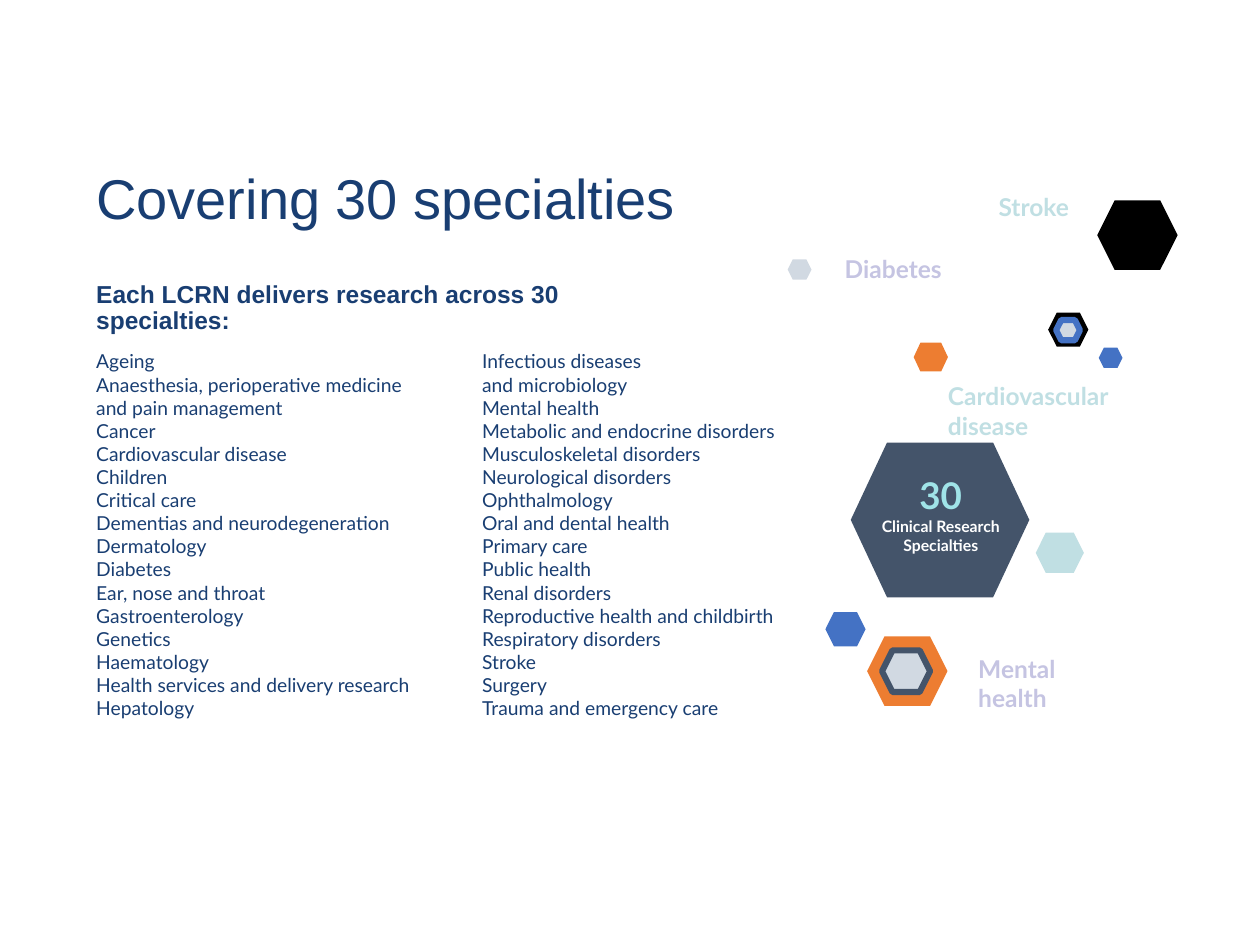
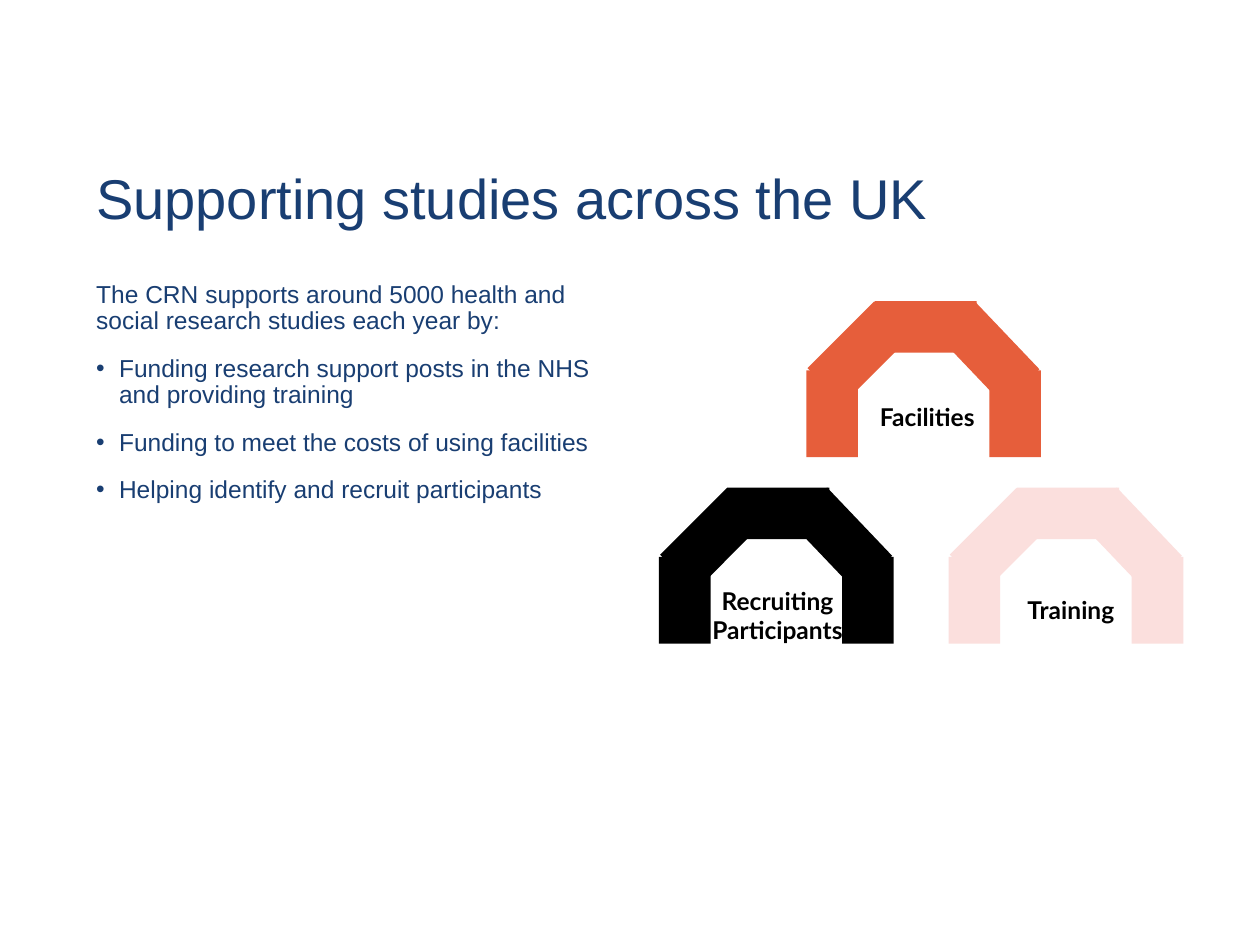
from dataclasses import dataclass

from lxml import etree
from pptx import Presentation
from pptx.dml.color import RGBColor
from pptx.enum.shapes import MSO_SHAPE
from pptx.enum.text import MSO_ANCHOR, MSO_AUTO_SIZE, PP_ALIGN
from pptx.oxml.ns import qn
from pptx.util import Cm, Pt

HEXAGON = MSO_SHAPE.HEXAGON
RECTANGLE = MSO_SHAPE.RECTANGLE
TOP, MIDDLE = MSO_ANCHOR.TOP, MSO_ANCHOR.MIDDLE
LEFT, CENTER = PP_ALIGN.LEFT, PP_ALIGN.CENTER
FIXED_SIZE = MSO_AUTO_SIZE.NONE
TITLE_AND_CONTENT = 1


@dataclass(frozen=True)
class Theme:
    heading_font: str = "Arial"
    label_font: str = "Lato"
    navy: str = "193E72"
    slate: str = "44546A"
    blue: str = "4472C4"
    orange: str = "ED7D31"
    mist: str = "D1D9E2"
    aqua: str = "C0DFE3"
    lilac: str = "C5C4E2"
    cyan: str = "A0E4E8"
    coral: str = "E65E3B"
    blush: str = "FBDFDD"
    black: str = "000000"
    white: str = "FFFFFF"
    title_size: float = 32
    count_size: float = 21
    body_size: float = 14
    list_size: float = 11
    caption_size: float = 9
    ring_width: float = 3.5
    side_inset: float = 0.19
    end_inset: float = 0.1


class Deck:
    def __init__(self, theme):
        self.theme = theme
        self.presentation = Presentation()
        self.presentation.slide_width = Cm(25.4)
        self.presentation.slide_height = Cm(19.05)
        self.slide = None

    def new_slide(self, title):
        layout = self.presentation.slide_layouts[TITLE_AND_CONTENT]
        self.slide = self.presentation.slides.add_slide(layout)
        heading = self.slide.shapes.title
        self.place(heading, 1.75, 3.15, 21.9, 1.8)
        self.frame(heading, anchor=MIDDLE)
        self.fill_line(heading.text_frame.paragraphs[0], title, self.theme.title_size,
                       self.theme.navy, self.theme.heading_font, line_spacing=0.9)

    def place(self, shape, *box):
        for side, length in zip(("left", "top", "width", "height"), box):
            setattr(shape, side, Cm(length))

    def frame(self, shape, anchor=TOP, end_inset=None):
        side = Cm(self.theme.side_inset)
        end = Cm(self.theme.end_inset if end_inset is None else end_inset)
        settings = {"word_wrap": True, "auto_size": FIXED_SIZE, "vertical_anchor": anchor,
                    "margin_left": side, "margin_right": side,
                    "margin_top": end, "margin_bottom": end}
        for name, value in settings.items():
            setattr(shape.text_frame, name, value)

    def fill_line(self, paragraph, text, size, color, font, bold=False, **layout):
        paragraph.text = text
        settings = {"alignment": LEFT, "space_before": Pt(0), "line_spacing": 1.0} | layout
        for name, value in settings.items():
            setattr(paragraph, name, value)
        for run in paragraph.runs:
            for name, value in {"name": font, "size": Pt(size), "bold": bold}.items():
                setattr(run.font, name, value)
            run.font.color.rgb = RGBColor.from_string(color)

    def paragraphs(self, shape, count):
        text_frame = shape.text_frame
        for _ in range(count - 1):
            text_frame.add_paragraph()
        return text_frame.paragraphs

    def bullet(self, paragraph, shown):
        indent = Cm(0.46) if shown else 0
        properties = paragraph._p.get_or_add_pPr()
        properties.set("marL", str(indent))
        properties.set("indent", str(-indent))
        if shown:
            color = etree.SubElement(properties, qn("a:buClr"))
            etree.SubElement(color, qn("a:srgbClr"), val=self.theme.navy)
            etree.SubElement(properties, qn("a:buChar"), char="•")
        else:
            etree.SubElement(properties, qn("a:buNone"))

    def body(self, box, intro, points=(), bold=False):
        content = self.slide.placeholders[1]
        self.place(content, *box)
        self.frame(content)
        lines = [intro, *points]
        for index, paragraph in enumerate(self.paragraphs(content, len(lines))):
            self.bullet(paragraph, index > 0)
            self.fill_line(paragraph, lines[index], self.theme.body_size, self.theme.navy,
                           self.theme.heading_font, bold, line_spacing=0.9,
                           space_before=Pt(12 if index else 0))

    def text(self, box, lines, anchor=TOP, end_inset=None, alignment=LEFT):
        block = self.slide.shapes.add_textbox(*map(Cm, box))
        self.frame(block, anchor, end_inset)
        for paragraph, (line, size, color, bold) in zip(self.paragraphs(block, len(lines)), lines):
            self.fill_line(paragraph, line, size, color, self.theme.label_font, bold,
                           alignment=alignment)

    def label(self, box, lines, color, alignment=LEFT):
        self.text(box, [(line, self.theme.body_size, color, True) for line in lines],
                  alignment=alignment)

    def shape(self, kind, box, fill, rotation=0, ring=None):
        figure = self.slide.shapes.add_shape(kind, *map(Cm, box))
        figure.shadow.inherit = False
        figure.rotation = rotation
        figure.fill.solid()
        figure.fill.fore_color.rgb = RGBColor.from_string(fill)
        if ring:
            figure.line.color.rgb = RGBColor.from_string(ring)
            figure.line.width = Pt(self.theme.ring_width)
        else:
            figure.line.fill.background()
        return figure

    def hexagon(self, box, fill, slant=0.25, rotation=0, ring=None):
        self.shape(HEXAGON, box, fill, rotation, ring).adjustments[0] = slant

    def arch(self, left, top, fill):
        post, slope = (1.75, 1.04), (1.9, 1.02)
        segments = [(0, 0, (2.06, 1.04), 0),
                    (-1.73, 1.75, post, 270), (-1.27, 0.53, slope, 315),
                    (1.96, 1.75, post, 270), (1.35, 0.53, slope, 46.4)]
        for across, down, size, rotation in segments:
            self.shape(RECTANGLE, (left + across, top + down, *size), fill, rotation)


def specialties_slide(deck):
    theme = deck.theme
    deck.new_slide("Covering 30 specialties")
    deck.body((1.75, 5.59, 11.53, 1.07),
              "Each LCRN delivers research across 30 specialties:", bold=True)

    deck.hexagon((17.15, 8.92, 3.6, 3.12), theme.slate, 0.234, 180)
    deck.text((17.2, 9.32, 3.53, 2.06),
              [("30", theme.count_size, theme.cyan, True),
               ("Clinical Research Specialties", theme.caption_size, theme.white, True)],
              MIDDLE, theme.side_inset, CENTER)

    specialties = [
        (1.75, ["Ageing", "Anaesthesia, perioperative medicine\vand pain management",
                "Cancer", "Cardiovascular disease", "Children", "Critical care",
                "Dementias and neurodegeneration", "Dermatology", "Diabetes",
                "Ear, nose and throat", "Gastroenterology", "Genetics", "Haematology",
                "Health services and delivery research", "Hepatology"]),
        (9.53, ["Infectious diseases\vand microbiology", "Mental health",
                "Metabolic and endocrine disorders", "Musculoskeletal disorders",
                "Neurological disorders", "Ophthalmology", "Oral and dental health",
                "Primary care", "Public health", "Renal disorders",
                "Reproductive health and childbirth", "Respiratory disorders",
                "Stroke", "Surgery", "Trauma and emergency care"]),
    ]
    for left, names in specialties:
        deck.text((left, 6.86, 8.94, 7.14),
                  [(name, theme.list_size, theme.navy, False) for name in names],
                  end_inset=theme.side_inset)

    tiny, small, medium = (0.48, 0.41), (0.81, 0.69), (1.62, 1.4)
    deck.hexagon((18.42, 6.91, 0.69, 0.58), theme.orange, 0.234)
    for left, top, size, fill, rotation, ring in [
        (21.13, 6.3, small, theme.black, 180, None),
        (21.29, 6.45, tiny, theme.mist, 180, theme.blue),
        (22.15, 7.01, tiny, theme.blue, 0, None),
        (16.64, 12.34, small, theme.blue, 0, None),
        (22.12, 4.04, medium, theme.black, 0, None),
        (17.48, 12.83, medium, theme.orange, 180, None),
        (17.78, 13.11, (0.97, 0.84), theme.mist, 180, theme.slate),
        (15.88, 5.23, tiny, theme.mist, 0, None),
        (20.88, 10.74, (0.97, 0.81), theme.aqua, 0, None),
    ]:
        deck.hexagon((left, top, *size), fill, rotation=rotation, ring=ring)

    for left, top, width, specialty, color in [
        (18.92, 7.59, 4.88, "Cardiovascular disease", theme.aqua),
        (16.84, 5.03, 2.49, "Diabetes", theme.lilac),
        (19.53, 13.08, 3.2, "Mental health", theme.lilac),
        (19.94, 3.78, 1.9, "Stroke", theme.aqua),
    ]:
        deck.label((left, top, width, 0.76), [specialty], color)


def support_slide(deck):
    theme = deck.theme
    deck.new_slide("Supporting studies across the UK")
    deck.body((1.75, 5.59, 10.36, 8.86),
              "The CRN supports around 5000 health and social research studies each year by:",
              ["Funding research support posts in the NHS and providing training",
               "Funding to meet the costs of using facilities",
               "Helping identify and recruit participants"])
    for left, top, fill in [(17.63, 6.07, theme.coral),
                            (20.5, 9.83, theme.blush),
                            (14.66, 9.83, theme.black)]:
        deck.arch(left, top, fill)
    for box, lines in [((14.05, 11.71, 3.25, 1.35), ["Recruiting", "Participants"]),
                       ((17.45, 8, 2.49, 0.76), ["Facilities"]),
                       ((20.47, 11.89, 2.24, 0.76), ["Training"])]:
        deck.label(box, lines, theme.black, CENTER)


def main():
    deck = Deck(Theme())
    specialties_slide(deck)
    support_slide(deck)
    deck.presentation.save("out.pptx")


if __name__ == "__main__":
    main()
